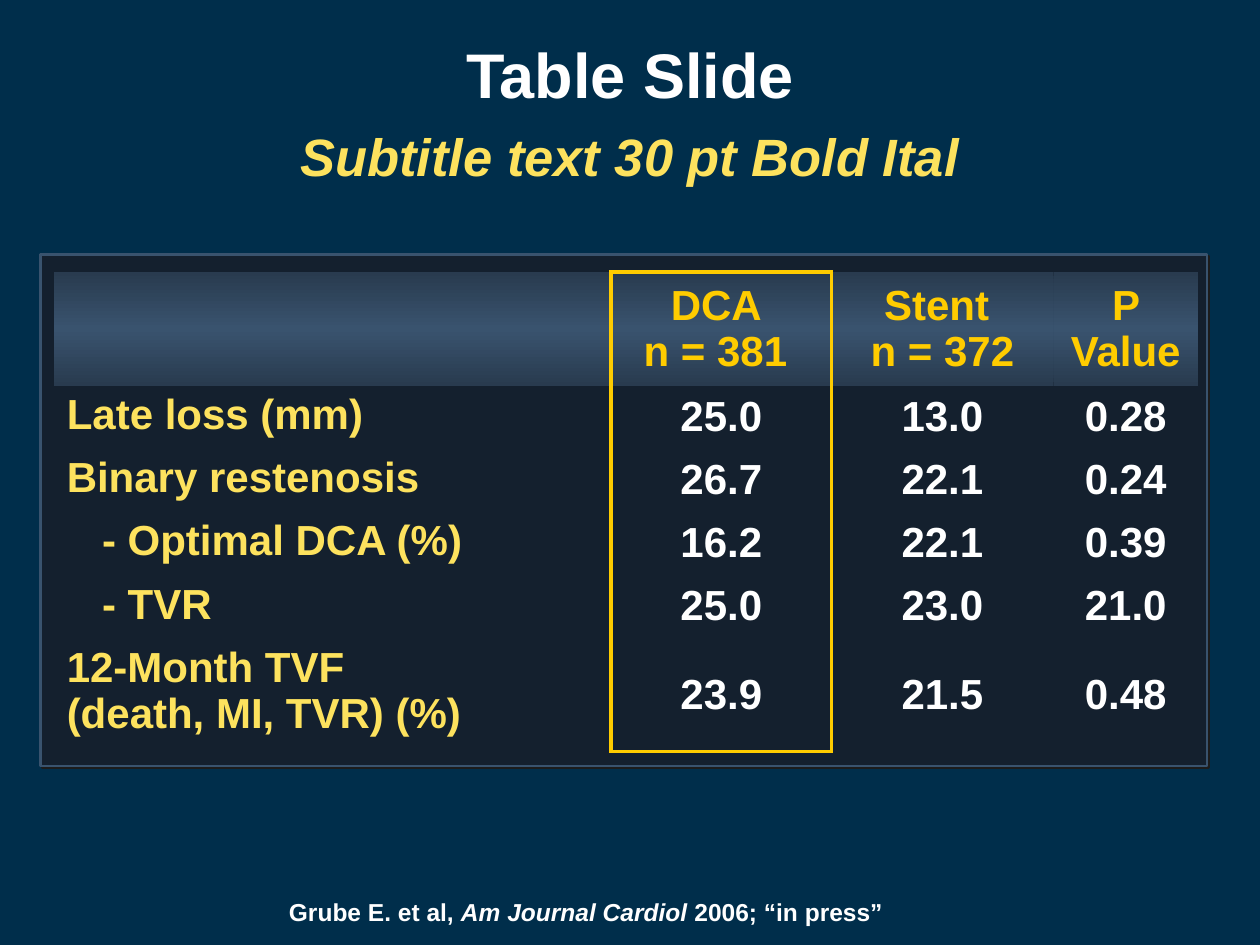
from lxml import etree
from pptx import Presentation
from pptx import util as u
from pptx.dml.color import RGBColor
from pptx.enum import shapes, text
from pptx.oxml import parse_xml
from pptx.oxml.ns import qn

NS = 'xmlns:a="http://schemas.openxmlformats.org/drawingml/2006/main"'
COLORS = {
    "background": "002E4B", "panel": "14202E", "band": "39536E", "band_edge": "293B4F",
    "gold": "FFCC00", "yellow": "FDE25E", "white": "FFFFFF", "shadow": "1C1C1C",
}
COLUMN_WIDTHS = [4.42, 1.75, 1.76, 1.15]
ROW_HEIGHTS = [0.9, 0.5, 0.5, 0.5, 0.5, 0.9]
ROWS = [
    ["", "DCA \nn = 381 ", "Stent \nn = 372", "P Value"],
    ["Late loss (mm)", "25.0", "13.0", "0.28"],
    ["Binary restenosis", "26.7", "22.1", "0.24"],
    ["- Optimal DCA (%)", "16.2", "22.1", "0.39"],
    ["- TVR", "25.0", "23.0", "21.0"],
    ["12-Month TVF \n(death, MI, TVR) (%)", "23.9", "21.5", "0.48"],
]
BOXED_COLUMN = 1


def rgb(name):
    return RGBColor.from_string(COLORS[name])


def write(paragraph, words, size=24, color="white", italic=False, center=True):
    """Add one line-broken piece of bold text to a paragraph."""
    paragraph.alignment = text.PP_ALIGN.CENTER if center else text.PP_ALIGN.LEFT
    for number, line in enumerate(words.split("\n")):
        if number:
            paragraph.add_line_break()
        run = paragraph.add_run()
        run.text = line
        font = run.font
        font.name, font.size = "Arial", u.Pt(size)
        font.bold, font.italic = True, italic
        font.color.rgb = rgb(color)


def text_box(slide, left, top, width, height, margin=0.05, anchor=text.MSO_ANCHOR.MIDDLE):
    """Add an empty text box and return its first paragraph."""
    box = slide.shapes.add_textbox(*map(u.Inches, (left, top, width, height)))
    frame = box.text_frame
    frame.word_wrap = True
    frame.vertical_anchor = anchor
    frame.margin_left = frame.margin_right = u.Inches(margin)
    return frame.paragraphs[0]


def set_borders(cell, gold_sides):
    """Draw the given sides in gold and hide the others."""
    properties = cell._tc.get_or_add_tcPr()
    for side in "LRTB":
        if side in gold_sides:
            paint = f'<a:solidFill><a:srgbClr val="{COLORS["gold"]}"/></a:solidFill>'
        else:
            paint = "<a:noFill/>"
        properties.append(parse_xml(f'<a:ln{side} {NS} w="{u.Pt(2.25)}">{paint}</a:ln{side}>'))


def fill_header(cell):
    stops = "".join(
        f'<a:gs pos="{position}"><a:srgbClr val="{COLORS[name]}"/></a:gs>'
        for position, name in ((0, "band_edge"), (50000, "band"), (100000, "band_edge")))
    cell._tc.get_or_add_tcPr().append(parse_xml(
        f'<a:gradFill {NS} rotWithShape="1"><a:gsLst>{stops}</a:gsLst>'
        '<a:lin ang="5400000" scaled="1"/></a:gradFill>'))


def gold_sides(row, column):
    """The box runs around one column; its neighbours share its sides."""
    if column == BOXED_COLUMN:
        return "LR" + "T" * (row == 0) + "B" * (row == len(ROWS) - 1)
    return {BOXED_COLUMN - 1: "R", BOXED_COLUMN + 1: "L"}.get(column, "")


def add_headings(slide, left, top, width):
    title = text_box(slide, left + 0.75, top, width - 1.5, 0.83)
    write(title, "Table Slide", size=36)
    subtitle = text_box(slide, left, top + 0.78, width, 0.63)
    subtitle.line_spacing = 0.9
    write(subtitle, "Subtitle text 30 pt Bold Ital", size=30, color="yellow", italic=True)


def add_panel(slide, left, top, width, height):
    panel = slide.shapes.add_shape(
        shapes.MSO_SHAPE.RECTANGLE, *map(u.Inches, (left, top, width, height)))
    panel.fill.solid()
    panel.fill.fore_color.rgb = rgb("panel")
    panel.line.color.rgb = rgb("band")
    panel.line.width = u.Pt(1.5)
    panel.shadow.inherit = False
    effects = panel._element.spPr.find(qn("a:effectLst"))
    shadow = etree.SubElement(effects, qn("a:outerShdw"), dist=str(u.Pt(1.4)),
                              dir="2700000", algn="ctr", rotWithShape="0")
    etree.SubElement(shadow, qn("a:srgbClr"), val=COLORS["shadow"])


def add_results_table(slide, left, top):
    frame = slide.shapes.add_table(
        len(ROWS), len(COLUMN_WIDTHS), u.Inches(left), u.Inches(top),
        u.Inches(sum(COLUMN_WIDTHS)), u.Inches(sum(ROW_HEIGHTS)))
    table = frame.table
    table.first_row = table.horz_banding = False
    for column, width in zip(table.columns, COLUMN_WIDTHS):
        column.width = u.Inches(width)
    for row, height in zip(table.rows, ROW_HEIGHTS):
        row.height = u.Inches(height)

    for r, values in enumerate(ROWS):
        for c, value in enumerate(values):
            cell = table.cell(r, c)
            is_label = c == 0
            set_borders(cell, gold_sides(r, c))
            if r == 0:
                fill_header(cell)
            else:
                cell.fill.background()
            if not is_label:
                cell.vertical_anchor = text.MSO_ANCHOR.MIDDLE
            elif value.startswith("-"):  # indented sub-item
                cell.margin_left = u.Inches(0.38)
            color = "gold" if r == 0 else "yellow" if is_label else "white"
            write(cell.text_frame.paragraphs[0], value, color=color, center=not is_label)


def add_citation(slide, left, top, width, height):
    citation = text_box(slide, left, top, width, height, margin=0.1,
                        anchor=text.MSO_ANCHOR.TOP)
    write(citation, "Grube E. et al, ", size=14)
    write(citation, "Am Journal Cardiol ", size=14, italic=True)
    write(citation, "2006; “in press”", size=14)


def main():
    deck = Presentation()
    deck.slide_width, deck.slide_height = u.Inches(10), u.Inches(7.5)
    slide = deck.slides.add_slide(deck.slide_layouts[6])
    slide.background.fill.solid()
    slide.background.fill.fore_color.rgb = rgb("background")

    add_panel(slide, 0.32, 2.02, 9.26, 4.06)
    add_headings(slide, 0, 0.17, 10)
    add_results_table(slide, 0.43, 2.16)
    add_citation(slide, 2.15, 7.07, 5, 0.3)
    deck.save("out.pptx")


if __name__ == "__main__":
    main()
